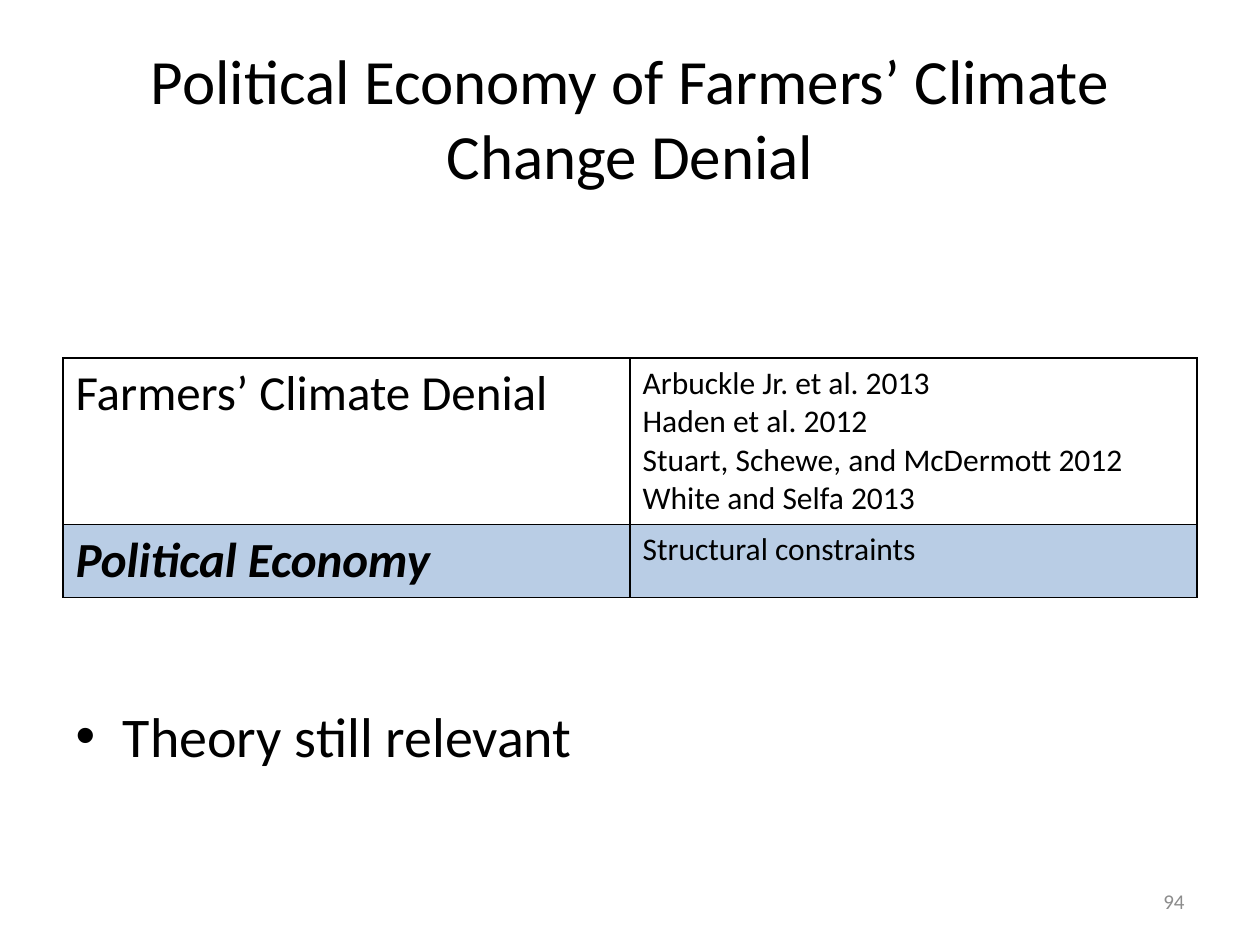
"""Build the slide on the political economy of farmers' climate change denial."""
from lxml import etree
from pptx import Presentation, util as u
from pptx.dml.color import RGBColor
from pptx.enum import text
from pptx.oxml.ns import qn

BLACK, GREY, BLUE = "000000", "8C8C8C", "B9CDE5"
REFERENCES = [
    "Arbuckle Jr. et al. 2013",
    "Haden et al. 2012",
    "Stuart, Schewe, and McDermott 2012",
    "White and Selfa 2013",
]
ROWS = [
    (166, None, False, "Farmers’ Climate Denial", REFERENCES),
    (73, BLUE, True, "Political Economy", ["Structural constraints"]),
]


def px(n):
    """Turn pixels into EMU."""
    return u.Inches(n / 126)


def color(value):
    """Turn a hex string into a colour."""
    return RGBColor.from_string(value)


def place(sp, left, top, width, height):
    """Set a shape's position and size in pixels."""
    sp.left, sp.top, sp.width, sp.height = map(px, (left, top, width, height))


def write(tf, lines, size, ink=BLACK, align=None, emphasis=False):
    """Write one paragraph for each line."""
    for i, line in enumerate(lines):
        p = tf.paragraphs[0] if i == 0 else tf.add_paragraph()
        p.alignment = align
        p.space_before = u.Pt(0)
        r = p.add_run()
        r.text = line
        r.font.name, r.font.size = "Calibri", u.Pt(size)
        r.font.bold = r.font.italic = emphasis
        r.font.color.rgb = color(ink)


def add_borders(cell):
    """Draw a thin black line on every side of a cell."""
    tcPr = cell._tc.get_or_add_tcPr()
    for side in ("a:lnL", "a:lnR", "a:lnT", "a:lnB"):
        ln = etree.SubElement(tcPr, qn(side), w=str(u.Pt(1)))
        fill = etree.SubElement(ln, qn("a:solidFill"))
        etree.SubElement(fill, qn("a:srgbClr"), val=BLACK)


def fill_cell(cell, lines, size, fill, emphasis=False):
    """Write, border and fill a cell."""
    write(cell.text_frame, lines, size, emphasis=emphasis)
    add_borders(cell)
    if fill:
        cell.fill.solid()
        cell.fill.fore_color.rgb = color(fill)
    else:
        cell.fill.background()


def add_literature_table(s):
    """Add the table of topics and their literature."""
    height = sum(row[0] for row in ROWS)
    frame = s.shapes.add_table(len(ROWS), 2, px(63), px(358), px(1134), px(height))
    table = frame.table
    table.first_row = table.horz_banding = False
    for i, (row_height, fill, emphasis, topic, notes) in enumerate(ROWS):
        table.rows[i].height = px(row_height)
        fill_cell(table.cell(i, 0), [topic], 28, fill, emphasis)
        fill_cell(table.cell(i, 1), notes, 18, fill)


def fill_placeholder(sp, box, line, size, anchor, align=None):
    """Move a placeholder and give it its text."""
    place(sp, *box)
    tf = sp.text_frame
    tf.auto_size = text.MSO_AUTO_SIZE.NONE
    tf.vertical_anchor = anchor
    write(tf, [line], size, align=align)


def add_slide_number(s, number):
    """Add the slide number at the lower right."""
    sp = s.shapes.add_textbox(px(903), px(876), px(294), px(50))
    tf = sp.text_frame
    tf.word_wrap = True
    tf.vertical_anchor = text.MSO_ANCHOR.MIDDLE
    write(tf, [number], 12, GREY, text.PP_ALIGN.RIGHT)


def main():
    """Build and save the slide."""
    prs = Presentation()
    prs.slide_width, prs.slide_height = px(1260), px(945)
    s = prs.slides.add_slide(prs.slide_layouts[1])
    fill_placeholder(s.shapes.title, (63, 38, 1134, 158),
                     "Political Economy of Farmers’ Climate Change Denial", 36,
                     text.MSO_ANCHOR.MIDDLE, text.PP_ALIGN.CENTER)
    fill_placeholder(s.placeholders[1], (63, 695, 1134, 149),
                     "Theory still relevant", 32, text.MSO_ANCHOR.TOP)
    add_literature_table(s)
    add_slide_number(s, "94")
    prs.save("out.pptx")


if __name__ == "__main__":
    main()
